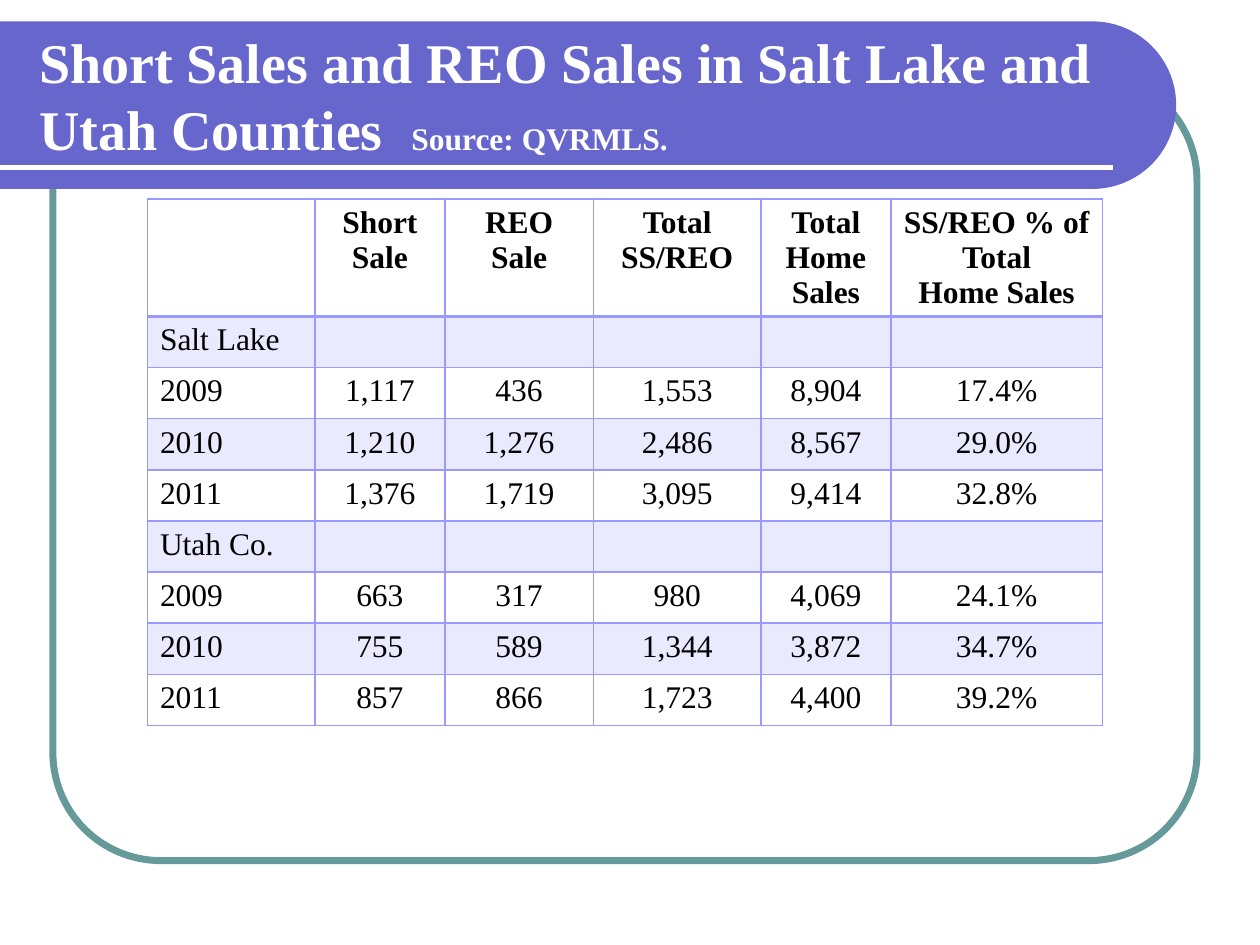
import math

import lxml.etree
import pptx
import pptx.dml.color
import pptx.enum.shapes
import pptx.enum.text
import pptx.oxml
import pptx.oxml.ns
import pptx.util

Inches = pptx.util.Inches
Pt = pptx.util.Pt
qn = pptx.oxml.ns.qn
ALIGN = pptx.enum.text.PP_ALIGN
FONT = "Times New Roman"
WHITE, BLACK = "FFFFFF", "000000"
BLUE, TEAL, LILAC = "6666CC", "669999", "9999FF"

WIDTHS = [1.33, 1.03, 1.18, 1.33, 1.03, 1.68]
HEAD = 0.93
TALL = 4.18
ROWS = [
    ["", "Short Sale", "REO\nSale", "Total\nSS/REO", "Total Home Sales",
     "SS/REO % of Total\nHome Sales"],
    ["Salt Lake"],
    ["2009", "1,117", "436", "1,553", "8,904", "17.4%"],
    ["2010", "1,210", "1,276", "2,486", "8,567", "29.0%"],
    ["2011", "1,376", "1,719", "3,095", "9,414", "32.8%"],
    ["Utah Co."],
    ["2009", "663", "317", "980", "4,069", "24.1%"],
    ["2010", "755", "589", "1,344", "3,872", "34.7%"],
    ["2011", "857", "866", "1,723", "4,400", "39.2%"],
]


def color(code):
    return pptx.dml.color.RGBColor.from_string(code)


def paint(part, code):
    part.fill.solid()
    part.fill.fore_color.rgb = color(code)


def stroke(line, code, width):
    line.color.rgb = color(code)
    line.width = Pt(width)


def write(para, text, size=18, code=BLACK, bold=False, align=ALIGN.LEFT):
    para.alignment = align
    run = para.add_run()
    run.text = text
    run.font.name = FONT
    run.font.size = Pt(size)
    run.font.bold = bold
    run.font.color.rgb = color(code)


def add_frame(slide):
    frame = slide.shapes.add_shape(
        pptx.enum.shapes.MSO_SHAPE.ROUNDED_RECTANGLE,
        Inches(0.42), Inches(0.58), Inches(9.08), Inches(6.25))
    frame.adjustments[0] = 0.137
    frame.shadow.inherit = False
    frame.fill.background()
    stroke(frame.line, TEAL, 4)


def add_banner(slide):
    # Square on the left, half a circle on the right
    top, low, mid = 0.17, 1.5, 8.67
    rad = (low - top) / 2
    turns = [math.radians(deg) for deg in range(-90, 91, 3)]
    arc = [(mid + rad * math.cos(turn), top + rad + rad * math.sin(turn))
           for turn in turns]
    pen = slide.shapes.build_freeform(0, Inches(top), scale=1.0)
    pen.add_line_segments(
        [(Inches(x), Inches(y)) for x, y in arc + [(0, low)]], close=True)
    banner = pen.convert_to_shape()
    banner.shadow.inherit = False
    paint(banner, BLUE)
    banner.line.fill.background()


def add_rule(slide):
    rule = slide.shapes.add_connector(
        pptx.enum.shapes.MSO_CONNECTOR.STRAIGHT,
        0, Inches(1.33), Inches(8.83), Inches(1.33))
    stroke(rule.line, WHITE, 3)
    lxml.etree.SubElement(rule._element.spPr, qn("a:effectLst"))


def set_title(slide):
    title = slide.shapes.title
    title.left, title.top = Inches(0.21), Inches(0.25)
    title.width, title.height = Inches(8.77), Inches(1)
    frame = title.text_frame
    frame.word_wrap = True
    frame.auto_size = pptx.enum.text.MSO_AUTO_SIZE.NONE
    frame.vertical_anchor = pptx.enum.text.MSO_ANCHOR.MIDDLE
    para = frame.paragraphs[0]
    write(para, "Short Sales and REO Sales in Salt Lake and Utah Counties  ",
          size=32, code=WHITE, bold=True)
    write(para, "Source: QVRMLS.", code=WHITE, bold=True)
    # Bring the title in front of the banner
    slide.shapes._spTree.append(title._element)


def edge(cell, side, width):
    props = cell._tc.get_or_add_tcPr()
    line = lxml.etree.SubElement(props, qn("a:" + side), w=str(Pt(width)))
    fill = lxml.etree.SubElement(line, qn("a:solidFill"))
    lxml.etree.SubElement(fill, qn("a:srgbClr"), val=LILAC)


def tint(cell):
    paint(cell, LILAC)
    tone = cell._tc.tcPr.find(qn("a:solidFill"))[0]
    lxml.etree.SubElement(tone, qn("a:alpha"), val="20000")


def fill_cell(cell, text, row, col):
    # Borders go before the fill; the rule below the header is thicker
    edge(cell, "lnL", 1)
    edge(cell, "lnR", 1)
    edge(cell, "lnT", 2 if row == 1 else 1)
    edge(cell, "lnB", 2 if row == 0 else 1)
    if row % 2:
        tint(cell)
    else:
        cell.fill.background()
    if not text:
        return
    frame = cell.text_frame
    for num, part in enumerate(text.split("\n")):
        para = frame.add_paragraph() if num else frame.paragraphs[0]
        write(para, part, bold=row == 0,
              align=ALIGN.CENTER if col else ALIGN.LEFT)


def add_sales(slide):
    table = slide.shapes.add_table(
        len(ROWS), len(WIDTHS), Inches(1.17), Inches(1.58),
        Inches(sum(WIDTHS)), Inches(TALL)).table
    table.first_row = table.horz_banding = False
    for col, width in enumerate(WIDTHS):
        table.columns[col].width = Inches(width)
    for row, texts in enumerate(ROWS):
        step = (TALL - HEAD) / (len(ROWS) - 1)
        table.rows[row].height = Inches(step if row else HEAD)
        for col in range(len(WIDTHS)):
            text = texts[col] if col < len(texts) else ""
            fill_cell(table.cell(row, col), text, row, col)


def main():
    deck = pptx.Presentation()
    deck.slide_width, deck.slide_height = Inches(10), Inches(7.5)
    slide = deck.slides.add_slide(deck.slide_layouts[5])
    # Backdrop
    add_frame(slide)
    add_banner(slide)
    add_rule(slide)
    # Content
    set_title(slide)
    add_sales(slide)
    deck.save("out.pptx")


if __name__ == "__main__":
    main()
